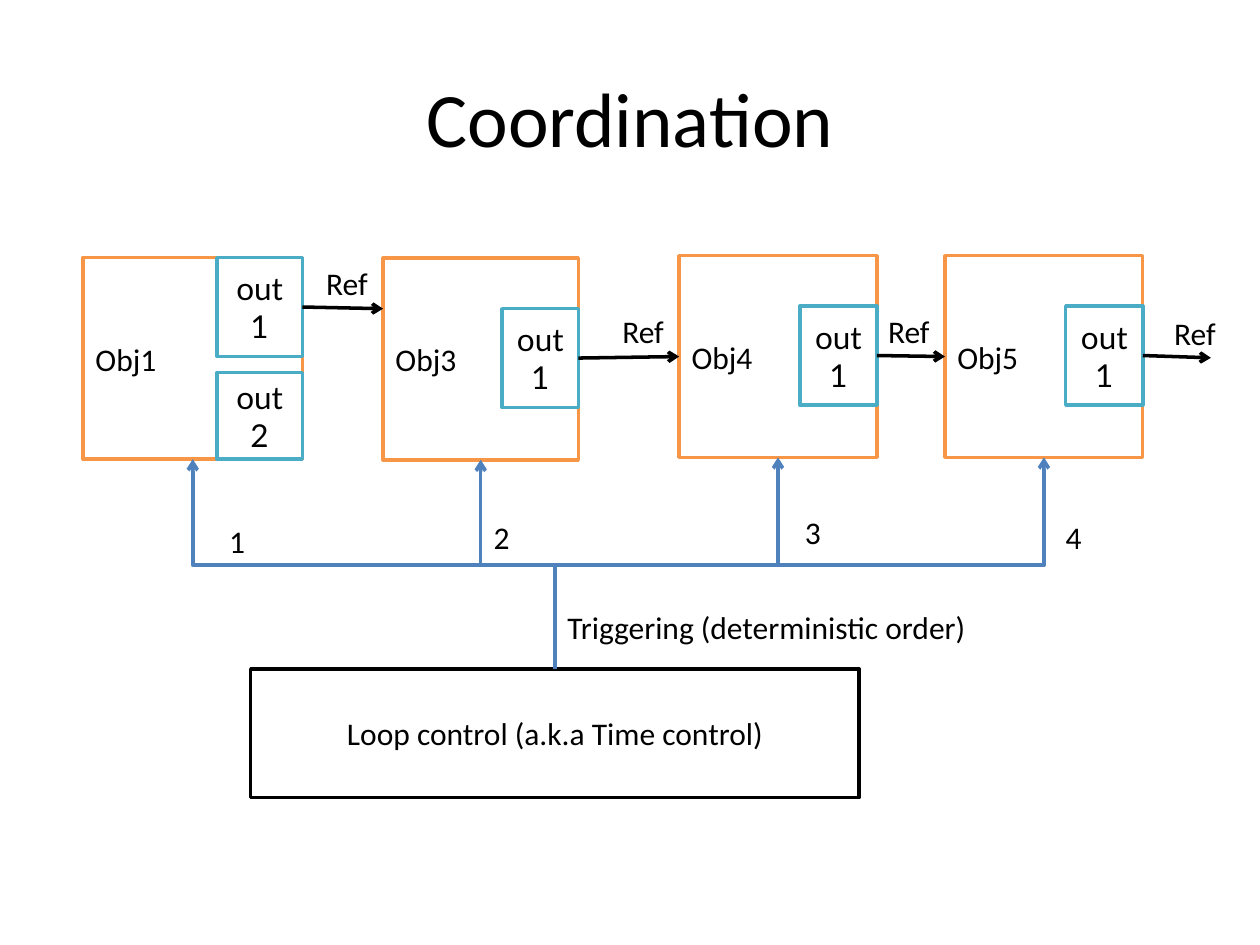
import pptx
import pptx.dml.color
import pptx.enum.shapes
import pptx.enum.text
import pptx.oxml
import pptx.oxml.ns
import pptx.util

COLUMNS, ROWS = 100, 75
WIDTH, HEIGHT = pptx.util.Inches(10), pptx.util.Inches(7.5)
BLACK, WHITE, ORANGE, TEAL, BLUE = "000000", "FFFFFF", "F79646", "4BACC6", "4F81BD"
ALIGN = pptx.enum.text.PP_ALIGN
ANCHOR = pptx.enum.text.MSO_ANCHOR
KIND = pptx.enum.shapes.MSO_CONNECTOR
TOP, LEFT, BOTTOM, RIGHT = range(4)
LABEL_ROWS = 4


def col(count):
    return round(WIDTH * count / COLUMNS)


def row(count):
    return round(HEIGHT * count / ROWS)


def place(box):
    left, top, width, height = box
    return col(left), row(top), col(width), row(height)


def colour(value):
    return pptx.dml.color.RGBColor.from_string(value)


def write(holder, text, size=18, font="Calibri", align=ALIGN.LEFT,
          anchor=ANCHOR.MIDDLE, wrap=True):
    frame = holder.text_frame
    frame.word_wrap = wrap
    frame.vertical_anchor = anchor
    paragraph = frame.paragraphs[0]
    paragraph.alignment = align
    run = paragraph.add_run()
    run.text = text
    run.font.size = pptx.util.Pt(size)
    run.font.name = font
    run.font.color.rgb = colour(BLACK)


def draw_label(slide, box, text):
    label = slide.shapes.add_textbox(*place(box))
    write(label, text, anchor=ANCHOR.TOP, wrap=False)
    label.text_frame.auto_size = pptx.enum.text.MSO_AUTO_SIZE.SHAPE_TO_FIT_TEXT


def draw_block(shapes, box, text, outline, **text_format):
    block = shapes.add_shape(pptx.enum.shapes.MSO_SHAPE.RECTANGLE, *place(box))
    block.shadow.inherit = False
    block.fill.solid()
    block.fill.fore_color.rgb = colour(WHITE)
    block.line.color.rgb = colour(outline)
    block.line.width = pptx.util.Pt(2)
    write(block, text, **text_format)
    return block


def style_arrow(arrow, shade):
    arrow.line.color.rgb = colour(shade)
    arrow.line.width = pptx.util.Pt(2)
    namespace = pptx.oxml.ns.nsdecls("a")
    arrow.line._get_or_add_ln().append(
        pptx.oxml.parse_xml(f'<a:tailEnd {namespace} type="arrow"/>'))
    arrow._element.spPr.append(pptx.oxml.parse_xml(f"<a:effectLst {namespace}/>"))


def draw_title(slide, box, text):
    title = slide.shapes.title
    title.left, title.top, title.width, title.height = place(box)
    write(title, text, size=44, align=ALIGN.CENTER)


def draw_object(slide, box, name, outputs):
    left, top, width, height = box
    group = slide.shapes.add_group_shape()
    body = draw_block(group.shapes, box, name, ORANGE)
    ports = [
        draw_block(group.shapes,
                   (left + 0.61 * width, top + start * height, 0.39 * width, share * height),
                   output, TEAL, font="Lato", align=ALIGN.CENTER)
        for output, start, share in outputs
    ]
    return body, ports


def draw_reference(slide, port, tip, label_right, target=None):
    tip_x, tip_y = tip
    arrow = slide.shapes.add_connector(KIND.STRAIGHT, 0, 0, col(tip_x), row(tip_y))
    arrow.begin_connect(port, RIGHT)
    if target is not None:
        arrow.end_connect(target, LEFT)
    style_arrow(arrow, BLACK)
    draw_label(slide, (label_right - 5.5, tip_y - LABEL_ROWS, 5.5, LABEL_ROWS), "Ref")


def draw_trigger(slide, source, target, bus):
    start_x, start_y = source.left + source.width // 2, source.top
    end_x, end_y = target.left + target.width // 2, target.top + target.height
    rise, run = start_y - end_y, abs(end_x - start_x)
    trigger = slide.shapes.add_connector(KIND.ELBOW, 0, 0, rise, run)
    trigger.begin_connect(source, TOP)
    trigger.end_connect(target, BOTTOM)
    trigger.left = (start_x + end_x - rise) // 2
    trigger.top = (start_y + end_y - run) // 2
    trigger.width, trigger.height = rise, run
    frame = trigger._element.spPr.find(pptx.oxml.ns.qn("a:xfrm"))
    frame.set("rot", str(270 * 60000))
    frame.set("flipH", "0")
    frame.set("flipV", "1" if end_x < start_x else "0")
    bend = round(100000 * (start_y - row(bus)) / rise)
    geometry = trigger._element.spPr.find(pptx.oxml.ns.qn("a:prstGeom"))
    for old in list(geometry):
        geometry.remove(old)
    geometry.append(pptx.oxml.parse_xml(
        f'<a:avLst {pptx.oxml.ns.nsdecls("a")}>'
        f'<a:gd name="adj1" fmla="val {bend}"/></a:avLst>'))
    style_arrow(trigger, BLUE)


def draw_loop(slide, box, bodies, order_places):
    left, top, width, height = box
    loop = draw_block(slide.shapes, box, "Loop control (a.k.a Time control)", BLACK,
                      align=ALIGN.CENTER)
    for body in bodies:
        draw_trigger(slide, loop, body, top - 8.25)
    draw_label(slide, (left + width / 2, top - 5.3, 34.2, LABEL_ROWS),
               "Triggering (deterministic order)")
    for order, (x, y) in enumerate(order_places, 1):
        draw_label(slide, (x, y, 3.3, LABEL_ROWS), str(order))


def main():
    deck = pptx.Presentation()
    deck.slide_width, deck.slide_height = WIDTH, HEIGHT
    slide = deck.slides.add_slide(deck.slide_layouts[5])
    draw_title(slide, (5, 3, 90, 12.5), "Coordination")

    middle_output = [("out1", 0.25, 0.49)]
    objects = [
        ("Obj1", (6.6, 20.45, 17.4, 16), [("out1", 0, 0.49), ("out2", 0.57, 0.43)]),
        ("Obj3", (30.4, 20.5, 15.5, 16), middle_output),
        ("Obj4", (53.9, 20.3, 15.7, 16), middle_output),
        ("Obj5", (75, 20.3, 15.7, 16), middle_output),
    ]
    bodies, ports = zip(*(draw_object(slide, box, name, outputs)
                          for name, box, outputs in objects))

    draw_reference(slide, ports[0][0], (30.4, 24.5), 30.4)
    draw_reference(slide, ports[1][0], (53.9, 28.3), 53.9, bodies[2])
    draw_reference(slide, ports[2][0], (75, 28.3), 75, bodies[3])
    draw_reference(slide, ports[3][0], (96.1, 28.4), 97.7)

    draw_loop(slide, (19.9, 53.1, 48.3, 10.2), bodies,
              [(17.2, 40.9), (38.2, 40.6), (62.9, 40.2), (83.6, 40.6)])
    deck.save("out.pptx")


if __name__ == "__main__":
    main()
